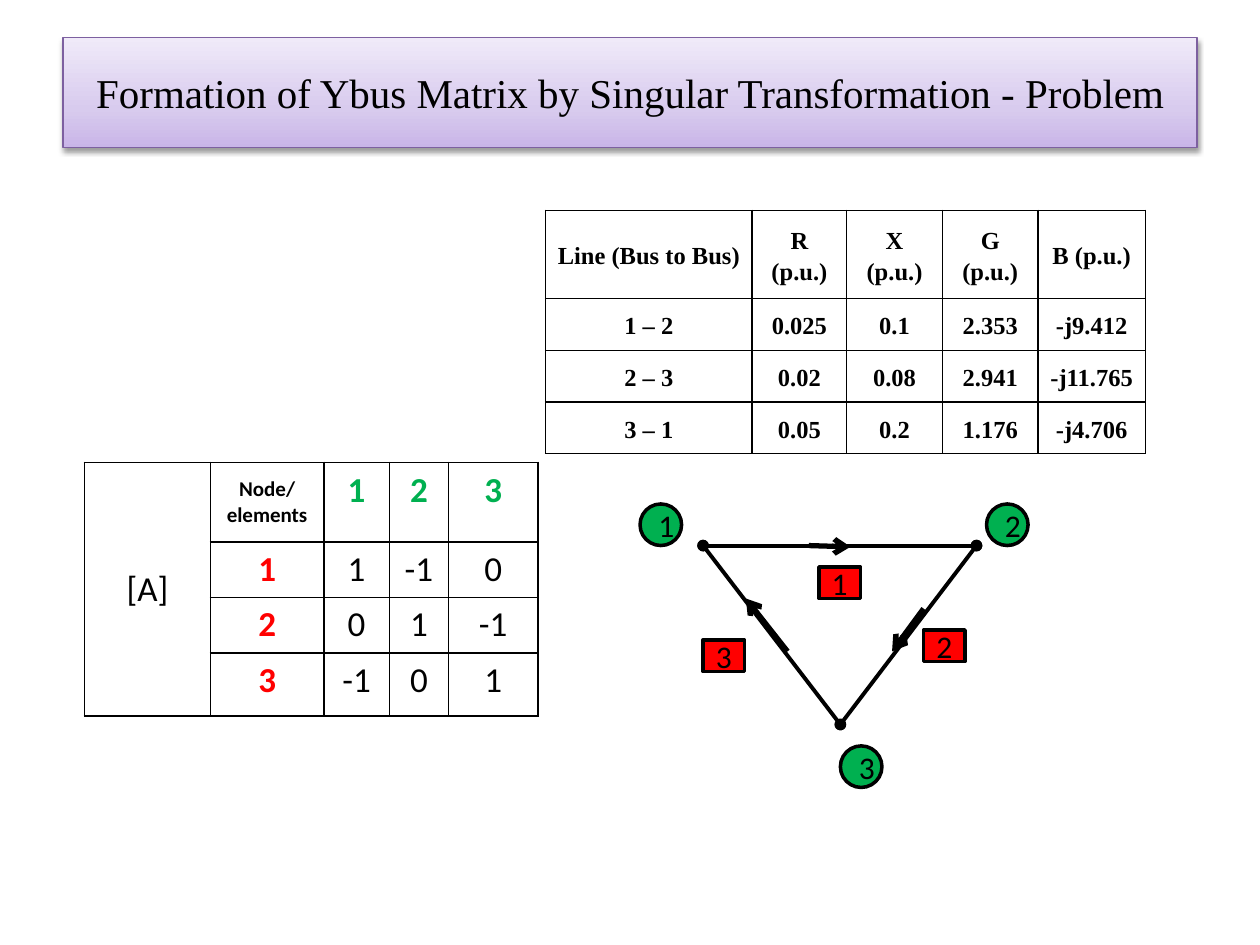
from itertools import product

from lxml import etree
from pptx import Presentation
from pptx.dml.color import RGBColor
from pptx.enum import shapes, text
from pptx.oxml import ns, parse_xml
from pptx.util import Inches, Pt

COLORS = {
    "black": "000000", "node": "00B050", "element": "FF0000", "title_line": "7D60A0",
    "title_low": "C9B5E8", "title_mid": "D8CBEE", "title_high": "F0EAF9",
}
SERIF, SANS = "Times New Roman", "Calibri"
A_NS = ns.nsdecls("a")


def rgb(name):
    """Return the named colour."""
    return RGBColor.from_string(COLORS[name])


def write(frame, words, size=18, font=SANS, color="black", bold=False, spacing=None):
    """Write one centred paragraph into a text frame."""
    frame.word_wrap = True
    paragraph = frame.paragraphs[0]
    paragraph.alignment = text.PP_ALIGN.CENTER
    if spacing:
        paragraph.line_spacing = spacing
    run = paragraph.add_run()
    run.text = words
    run.font.size, run.font.name, run.font.bold = Pt(size), font, bold
    run.font.color.rgb = rgb(color)


def add_box(parent, kind, left, top, width, height, line, weight):
    """Add an outlined preset shape without a shadow."""
    box = parent.add_shape(kind, Inches(left), Inches(top), Inches(width), Inches(height))
    box.shadow.inherit = False
    box.line.color.rgb, box.line.width = rgb(line), Pt(weight)
    box.text_frame.vertical_anchor = text.MSO_ANCHOR.MIDDLE
    return box


def add_title(slide, left, top, width, height):
    """Add the shaded title banner."""
    banner = add_box(slide.shapes, shapes.MSO_SHAPE.RECTANGLE, left, top, width, height,
                     "title_line", 0.75)
    stops = "".join(
        f'<a:gs pos="{share * 1000}"><a:srgbClr val="{COLORS[name]}"/></a:gs>'
        for share, name in ((0, "title_low"), (35, "title_mid"), (100, "title_high")))
    gradient = parse_xml(f'<a:gradFill {A_NS} rotWithShape="1"><a:gsLst>{stops}</a:gsLst>'
                         '<a:lin ang="16200000" scaled="0"/></a:gradFill>')
    properties = banner._element.spPr
    properties.find(ns.qn("a:prstGeom")).addnext(gradient)
    properties.find(ns.qn("a:effectLst")).append(parse_xml(
        f'<a:outerShdw {A_NS} blurRad="40000" dist="20000" dir="5400000" rotWithShape="0">'
        f'<a:srgbClr val="{COLORS["black"]}"><a:alpha val="38000"/></a:srgbClr></a:outerShdw>'))
    write(banner.text_frame, "Formation of Ybus Matrix by Singular Transformation - Problem",
          size=23.4, font=SERIF)


def add_grid(slide, left, top, widths, heights):
    """Add an unfilled table with thin black borders."""
    table = slide.shapes.add_table(len(heights), len(widths), Inches(left), Inches(top),
                                   Inches(sum(widths)), Inches(sum(heights))).table
    table.first_row = table.horz_banding = False
    for column, width in zip(table.columns, widths):
        column.width = Inches(width)
    for row, height in zip(table.rows, heights):
        row.height = Inches(height)
    for cell in table.iter_cells():
        cell.fill.background()
        for index, side in enumerate("LRTB"):
            cell._tc.get_or_add_tcPr().insert(index, parse_xml(
                f'<a:ln{side} {A_NS} w="12700"><a:solidFill>'
                f'<a:srgbClr val="{COLORS["black"]}"/></a:solidFill></a:ln{side}>'))
    return table


def add_incidence_table(slide, left, top):
    """Add the element-node incidence matrix [A]."""
    table = add_grid(slide, left, top, (1, 0.9, 0.52, 0.47, 0.71), (0.63, 0.44, 0.44, 0.5))
    matrix = ((1, -1, 0), (0, 1, -1), (-1, 0, 1))
    name, corner = table.cell(0, 0), table.cell(0, 1)
    name.merge(table.cell(3, 0))
    write(name.text_frame, "[A]", size=20)
    write(corner.text_frame, "Node/ elements", size=12, bold=True)
    name.vertical_anchor = corner.vertical_anchor = text.MSO_ANCHOR.MIDDLE
    for number in (1, 2, 3):
        write(table.cell(0, number + 1).text_frame, str(number), size=20, color="node", bold=True)
        write(table.cell(number, 1).text_frame, str(number), size=20, color="element", bold=True)
    for row, column in product(range(3), repeat=2):
        write(table.cell(row + 1, column + 2).text_frame, str(matrix[row][column]), size=20)


def add_line_data_table(slide, left, top):
    """Add the impedance and admittance of each line."""
    rows = (
        ("Line (Bus to Bus)", "R (p.u.)", "X (p.u.)", "G (p.u.)", "B (p.u.)"),
        ("1 – 2", "0.025", "0.1", "2.353", "-j9.412"),
        ("2 – 3", "0.02", "0.08", "2.941", "-j11.765"),
        ("3 – 1", "0.05", "0.2", "1.176", "-j4.706"),
    )
    table = add_grid(slide, left, top, (1.64, 0.75, 0.76, 0.76, 0.85), (0.7, 0.41, 0.41, 0.41))
    for cell, words in zip(table.iter_cells(), (words for row in rows for words in row)):
        cell.margin_left = cell.margin_right = Inches(0.07)
        cell.margin_top = cell.margin_bottom = 0
        cell.vertical_anchor = text.MSO_ANCHOR.MIDDLE
        write(cell.text_frame, words, size=14, font=SERIF, bold=True, spacing=1.15)


def add_link(parent, start, end, weight, **ends):
    """Add a straight black line with the given end marks."""
    link = parent.add_connector(shapes.MSO_CONNECTOR.STRAIGHT, *map(Inches, start + end))
    link.line.color.rgb, link.line.width = rgb("black"), Pt(weight)
    outline = link.line._get_or_add_ln()
    for tag, mark in ends.items():
        etree.SubElement(outline, ns.qn(f"a:{tag}"), type=mark)
    etree.SubElement(link._element.spPr, ns.qn("a:effectLst"))


def add_network(slide, left, top):
    """Add the directed three-bus graph."""
    network = slide.shapes.add_group_shape().shapes

    def at(x, y):
        """Shift a point into the network box."""
        return left + x, top + y

    buses = at(0.5, 0.33), at(2.67, 0.33), at(1.59, 1.75)
    for start, end in ((0, 1), (0, 2), (2, 1)):
        add_link(network, buses[start], buses[end], 2.25, headEnd="oval", tailEnd="oval")
    directions = (((1.34, 0.33), (1.67, 0.34)), ((2.25, 0.83), (2, 1.17)),
                  ((1.17, 1.17), (0.84, 0.75)))
    for start, end in directions:
        add_link(network, at(*start), at(*end), 3, tailEnd="arrow")
    labels = (
        (shapes.MSO_SHAPE.OVAL, "node", 0.33, ((0, 0), (2.75, 0), (1.59, 1.92))),
        (shapes.MSO_SHAPE.RECTANGLE, "element", 0.25, ((1.42, 0.5), (2.25, 1), (0.5, 1.08))),
    )
    for kind, color, height, places in labels:
        for number, place in enumerate(places, 1):
            label = add_box(network, kind, *at(*place), 0.33, height, "black", 2)
            label.fill.solid()
            label.fill.fore_color.rgb = rgb(color)
            write(label.text_frame, str(number))


def main():
    """Build the slide and save it."""
    deck = Presentation()
    deck.slide_width, deck.slide_height = Inches(10), Inches(7.5)
    slide = deck.slides.add_slide(deck.slide_layouts[6])
    add_incidence_table(slide, 0.67, 3.67)
    add_title(slide, 0.5, 0.3, 9, 0.87)
    add_network(slide, 5.08, 4)
    add_line_data_table(slide, 4.33, 1.67)
    deck.save("out.pptx")


if __name__ == "__main__":
    main()
